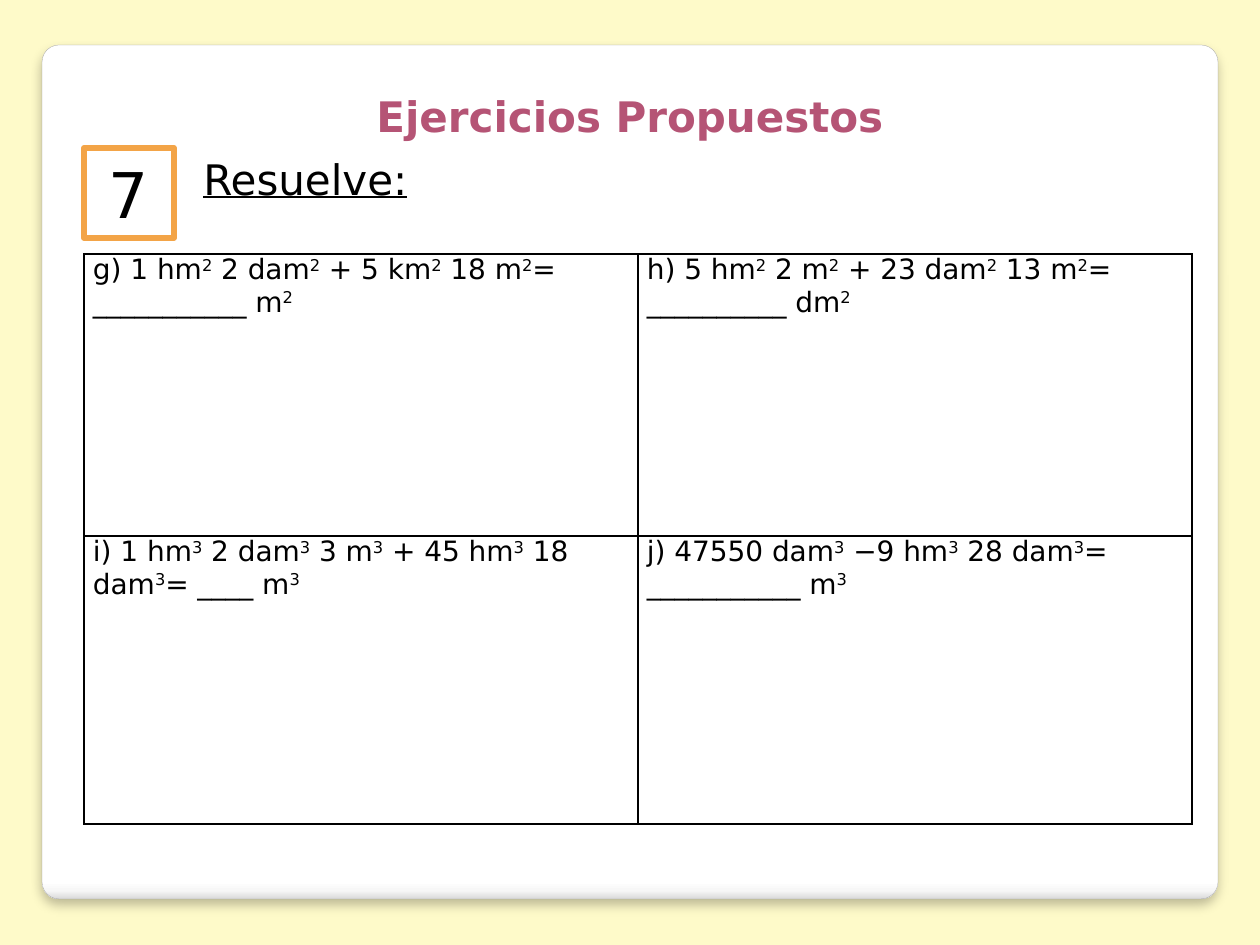
"""Builds the slide of proposed exercises on area and volume units."""
from lxml import etree
from pptx import Presentation
from pptx.dml.color import RGBColor
from pptx.enum.shapes import MSO_SHAPE as SHAPE
from pptx.enum.text import MSO_ANCHOR as ANCHOR, PP_ALIGN as ALIGN
from pptx.oxml import parse_xml
from pptx.oxml.ns import nsdecls, qn
from pptx.util import Emu, Pt

FONT = "DejaVu Sans"
COLORS = {"bg": "FEFAC9", "panel": "FFFFFF", "edge": "A4A4A4", "title": "B55475",
          "badge": "F3A447", "ink": "000000"}
PANEL_STOPS = [(0, "FFFFFF"), (98, "FFFFFF"), (99, "F7F7F7"), (100, "DADADA")]
TITLE, NUMBER, PROMPT = "Ejercicios Propuestos", "7", "Resuelve:"
EXERCISES = [
    [(["g) 1 hm", " 2 dam", " + 5 km", " 18 m", "= ___________ m"], "2"),
     (["h) 5 hm", " 2 m", " + 23 dam", " 13 m", "= __________ dm"], "2")],
    [(["i) 1 hm", " 2 dam", " 3 m", " + 45 hm", " 18 dam", "= ____ m"], "3"),
     (["j) 47550 dam", " −9 hm", " 28 dam", "= ___________ m"], "3")],
]
ROW_HEIGHTS = [282, 288]
COL_WIDTH = 554


def px(n):
    return Emu(round(n * 914400 / 126))


def rgb(name):
    return RGBColor.from_string(COLORS[name])


def add_run(p, text, size, color="ink", bold=False, underline=False, raised=False):
    r = p.add_run()
    r.text = text
    f = r.font
    f.name, f.size, f.bold, f.underline = FONT, Pt(size), bold, underline
    f.color.rgb = rgb(color)
    if raised:
        r._r.get_or_add_rPr().set("baseline", "30000")


def add_box(s, kind, box, line, width):
    sp = s.shapes.add_shape(kind, *map(px, box))
    sp.shadow.inherit = False
    sp.fill.solid()
    sp.fill.fore_color.rgb = rgb("panel")
    sp.line.color.rgb = rgb(line)
    sp.line.width = Pt(width)
    return sp


def add_label(s, box, text, align, **style):
    tf = s.shapes.add_textbox(*map(px, box)).text_frame
    tf.word_wrap = True
    p = tf.paragraphs[0]
    p.alignment = align
    add_run(p, text, 24, **style)


def add_panel(s):
    sp = add_box(s, SHAPE.ROUNDED_RECTANGLE, (42, 45, 1176, 854), "edge", 0.16)
    sp.adjustments[0] = 0.02
    stops = "".join(f'<a:gs pos="{pos * 1000}"><a:srgbClr val="{c}"/></a:gs>'
                    for pos, c in PANEL_STOPS)
    grad = parse_xml(f'<a:gradFill {nsdecls("a")} rotWithShape="1"><a:gsLst>{stops}</a:gsLst>'
                     '<a:lin ang="5400000" scaled="0"/></a:gradFill>')
    pr = sp._element.spPr
    pr.replace(pr.find(qn("a:solidFill")), grad)
    pr.find(qn("a:effectLst")).append(parse_xml(
        f'<a:outerShdw {nsdecls("a")} blurRad="{Pt(6)}" dist="{Pt(4)}" dir="5400000" '
        'algn="t" rotWithShape="0"><a:srgbClr val="000000"><a:alpha val="25000"/>'
        '</a:srgbClr></a:outerShdw>'))


def add_badge(s):
    tf = add_box(s, SHAPE.RECTANGLE, (84, 148, 90, 90), "badge", 3.35).text_frame
    tf.vertical_anchor = ANCHOR.MIDDLE
    p = tf.paragraphs[0]
    p.alignment = ALIGN.CENTER
    add_run(p, NUMBER, 36)


def add_borders(cell):
    pr = cell._tc.get_or_add_tcPr()
    for i, side in enumerate(("lnL", "lnR", "lnT", "lnB")):
        ln = etree.Element(qn(f"a:{side}"), w=str(Pt(1)))
        fill = etree.SubElement(ln, qn("a:solidFill"))
        etree.SubElement(fill, qn("a:srgbClr"), val=COLORS["ink"])
        pr.insert(i, ln)


def add_exercises(s):
    rows, cols = len(EXERCISES), len(EXERCISES[0])
    box = (84, 254, COL_WIDTH * cols, sum(ROW_HEIGHTS))
    table = s.shapes.add_table(rows, cols, *map(px, box)).table
    table.first_row = table.horz_banding = False
    for col in table.columns:
        col.width = px(COL_WIDTH)
    for i, exercises in enumerate(EXERCISES):
        table.rows[i].height = px(ROW_HEIGHTS[i])
        for j, (pieces, exponent) in enumerate(exercises):
            cell = table.cell(i, j)
            cell.fill.background()
            cell.margin_left = cell.margin_right = px(9)
            cell.margin_top = cell.margin_bottom = 0
            add_borders(cell)
            p = cell.text_frame.paragraphs[0]
            for piece in pieces:
                add_run(p, piece, 16)
                add_run(p, exponent, 16, raised=True)


def main():
    prs = Presentation()
    prs.slide_width, prs.slide_height = px(1260), px(945)
    s = prs.slides.add_slide(prs.slide_layouts[6])
    s.background.fill.solid()
    s.background.fill.fore_color.rgb = rgb("bg")
    add_panel(s)
    add_label(s, (49, 84, 1162, 63), TITLE, ALIGN.CENTER, color="title", bold=True)
    add_badge(s)
    add_label(s, (191, 147, 1002, 63), PROMPT, ALIGN.LEFT, underline=True)
    add_exercises(s)
    prs.save("out.pptx")


if __name__ == "__main__":
    main()
